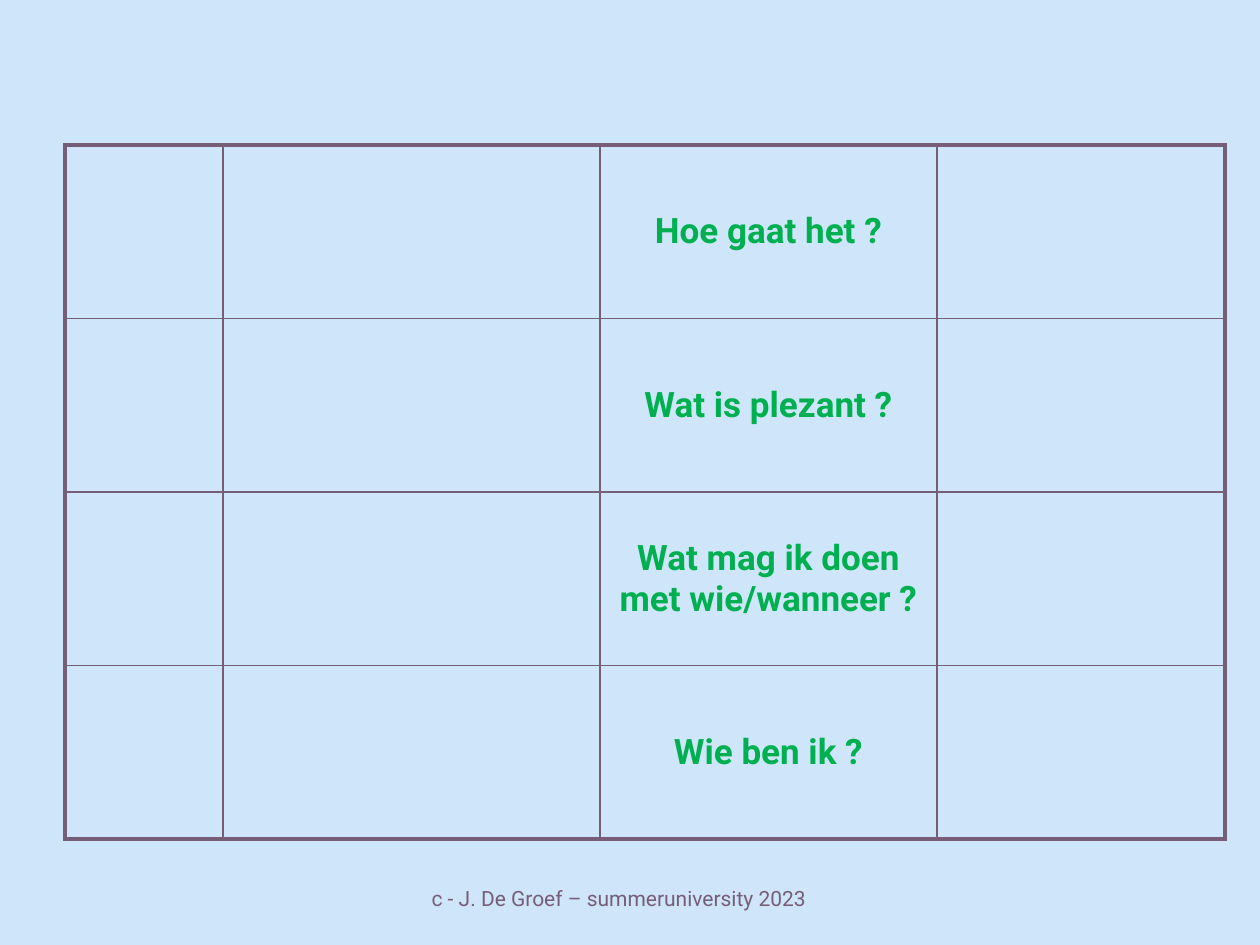
"""Build a slide with a grid of four questions and a footer."""
from lxml import etree
from pptx import Presentation, util as u
from pptx.dml.color import RGBColor
from pptx.enum import text as t
from pptx.oxml import ns

SKY = RGBColor(0xCE, 0xE5, 0xFA)
PLUM = RGBColor(0x77, 0x5E, 0x78)
GREEN = RGBColor(0x00, 0xB0, 0x50)
FONT = "Roboto"
ASKS = ["Hoe gaat het ?", "Wat is plezant ?",
        "Wat mag ik doen met wie/wanneer ?", "Wie ben ik ?"]
COLS = [158, 377, 337, 288]
ASK_COL = 2
THIN, THICK = 1, 2.25


def px(n):
    return u.Emu(round(n * 914400 / 126))


def write(frame, words, size, color, bold=False, above=0):
    frame.word_wrap = True
    par = frame.paragraphs[0]
    par.alignment = t.PP_ALIGN.CENTER
    par.space_before = u.Pt(above)
    run = par.add_run()
    run.text = words
    run.font.name = FONT
    run.font.size = u.Pt(size)
    run.font.bold = bold
    run.font.color.rgb = color


def edge(cell, sides):
    props = cell._tc.get_or_add_tcPr()
    for i, (side, thick) in enumerate(sides.items()):
        line = etree.Element(ns.qn(f"a:ln{side}"),
                             w=str(u.Pt(THICK if thick else THIN)))
        fill = etree.SubElement(line, ns.qn("a:solidFill"))
        etree.SubElement(fill, ns.qn("a:srgbClr"), val=str(PLUM))
        props.insert(i, line)


def add_grid(slide, left, top, height):
    rows, cols = len(ASKS), len(COLS)
    grid = slide.shapes.add_table(rows, cols, px(left), px(top),
                                  px(sum(COLS)), px(height)).table
    grid.first_row = grid.horz_banding = False
    for col, width in zip(grid.columns, COLS):
        col.width = px(width)
    for r, ask in enumerate(ASKS):
        grid.rows[r].height = px(height / rows)
        for c in range(cols):
            cell = grid.cell(r, c)
            cell.fill.background()
            edge(cell, {"L": c == 0, "R": c == cols - 1,
                        "T": r == 0, "B": r == rows - 1})
        cell = grid.cell(r, ASK_COL)
        cell.vertical_anchor = t.MSO_ANCHOR.MIDDLE
        write(cell.text_frame, ask, 20, GREEN, bold=True, above=4)


def add_foot(slide, words, left, top, width, height):
    frame = slide.shapes.add_textbox(
        px(left), px(top), px(width), px(height)).text_frame
    frame.vertical_anchor = t.MSO_ANCHOR.MIDDLE
    write(frame, words, 12, PLUM)


def main():
    deck = Presentation()
    deck.slide_width, deck.slide_height = px(1260), px(945)
    slide = deck.slides.add_slide(deck.slide_layouts[6])
    back = slide.background.fill
    back.solid()
    back.fore_color.rgb = SKY
    add_foot(slide, "c - J. De Groef – summeruniversity 2023",
             272, 880, 694, 37)
    add_grid(slide, 65, 145, 694)
    deck.save("out.pptx")


if __name__ == "__main__":
    main()
